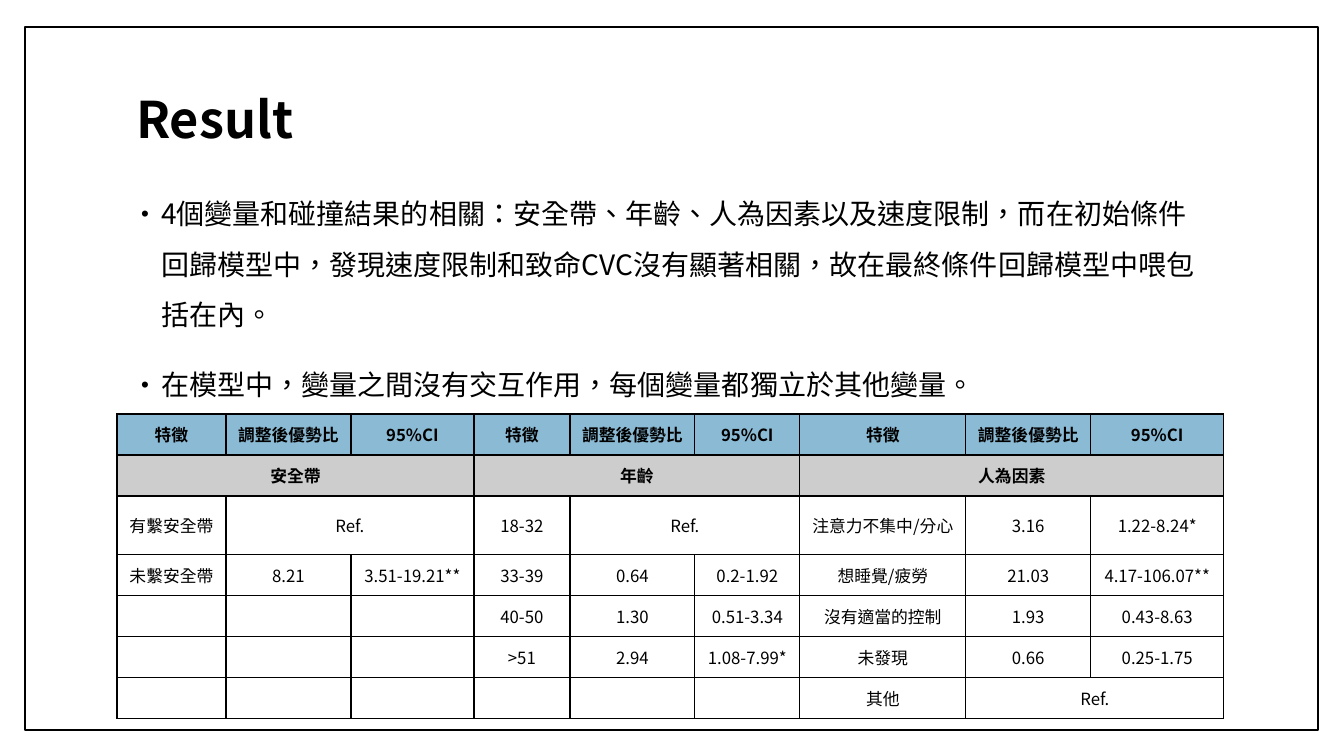
import itertools
from dataclasses import dataclass

import pptx
import pptx.dml.color
import pptx.enum.shapes
import pptx.enum.text
import pptx.oxml
import pptx.oxml.ns
import pptx.util

PX = 914400 / 100.8  # EMU in one px
ALIGN = pptx.enum.text.PP_ALIGN
MIDDLE = pptx.enum.text.MSO_ANCHOR.MIDDLE


@dataclass(frozen=True)
class Theme:
    font: str = "Noto Sans CJK SC"
    ink: str = "000000"
    paper: str = "FFFFFF"
    header: str = "8ABAD4"
    group: str = "CDCDCD"
    title_size: int = 36
    body_size: int = 20
    cell_size: int = 12
    line: int = 1


THEME = Theme()

BULLETS = [
    "4個變量和碰撞結果的相關：安全帶、年齡、人為因素以及速度限制，而在初始條件"
    "回歸模型中，發現速度限制和致命CVC沒有顯著相關，故在最終條件回歸模型中喂包括在內。",
    "在模型中，變量之間沒有交互作用，每個變量都獨立於其他變量。",
]

# None continues the cell on its left
COLUMNS = [109, 125, 123, 96, 125, 105, 166, 125, 133]
ROWS = [
    ["特徵", "調整後優勢比", "95%CI"] * 3,
    ["安全帶", None, None, "年齡", None, None, "人為因素", None, None],
    ["有繫安全帶", "Ref.", None, "18-32", "Ref.", None, "注意力不集中/分心", "3.16", "1.22-8.24*"],
    ["未繫安全帶", "8.21", "3.51-19.21**", "33-39", "0.64", "0.2-1.92",
     "想睡覺/疲勞", "21.03", "4.17-106.07**"],
    ["", "", "", "40-50", "1.30", "0.51-3.34", "沒有適當的控制", "1.93", "0.43-8.63"],
    ["", "", "", ">51", "2.94", "1.08-7.99*", "未發現", "0.66", "0.25-1.75"],
    ["", "", "", "", "", "", "其他", "Ref.", None],
]
ROW_HEIGHT = 41


def px(n):
    return pptx.util.Emu(round(n * PX))


def rgb(value):
    return pptx.dml.color.RGBColor.from_string(value)


def xml(text):
    head, tail = text.split(" ", 1)
    return pptx.oxml.parse_xml(f'{head} {pptx.oxml.ns.nsdecls("a")} {tail}')


def write(p, text, size, bold=False, align=ALIGN.LEFT, spacing=None, before=None):
    """Put one formatted run in a paragraph."""
    p.alignment = align
    if spacing is not None:
        p.line_spacing = spacing
    if before is not None:
        p.space_before = pptx.util.Pt(before)
    r = p.add_run()
    r.text = text
    r.font.size = pptx.util.Pt(size)
    r.font.bold = bold
    r.font.color.rgb = rgb(THEME.ink)
    r.font.name = THEME.font
    rpr = r._r.get_or_add_rPr()
    rpr.set("lang", "zh-TW")
    rpr.find(pptx.oxml.ns.qn("a:latin")).addnext(xml(f'<a:ea typeface="{THEME.font}"/>'))


def place(s, left, top, width, height):
    s.left, s.top, s.width, s.height = map(px, (left, top, width, height))


def add_bullet(p):
    ppr = p._p.get_or_add_pPr()
    ppr.set("marL", str(px(25)))
    ppr.set("indent", str(-px(20)))
    for part in (f'<a:buClr ><a:srgbClr val="{THEME.ink}"/></a:buClr>',
                 '<a:buSzPct val="80000"/>',
                 '<a:buFont typeface="Arial"/>',
                 '<a:buChar char="•"/>'):
        ppr.append(xml(part))


def add_frame(slide, left, top, width, height):
    s = slide.shapes.add_shape(pptx.enum.shapes.MSO_SHAPE.RECTANGLE,
                               *map(px, (left, top, width, height)))
    s.shadow.inherit = False
    s.fill.solid()
    s.fill.fore_color.rgb = rgb(THEME.paper)
    s.line.color.rgb = rgb(THEME.ink)
    s.line.width = pptx.util.Pt(THEME.line)
    # Send it behind the placeholders
    slide.shapes.title.element.addprevious(s.element)


def add_title(slide, text):
    s = slide.shapes.title
    place(s, 126, 68, 1089, 108)
    s.text_frame.vertical_anchor = MIDDLE
    write(s.text_frame.paragraphs[0], text, THEME.title_size, bold=True, spacing=0.9)


def add_list(slide, items):
    s = slide.placeholders[1]
    place(s, 126, 175, 1089, 497)
    tf = s.text_frame
    for i, item in enumerate(items):
        p = tf.add_paragraph() if i else tf.paragraphs[0]
        write(p, item, THEME.body_size, spacing=1.5, before=14)
        add_bullet(p)


def style_cell(cell, fill):
    tcpr = cell._tc.get_or_add_tcPr()
    width = pptx.util.Pt(THEME.line)
    for side in ("lnL", "lnR", "lnT", "lnB"):
        tcpr.append(xml(f'<a:{side} w="{width}"><a:solidFill><a:srgbClr val="{THEME.ink}"/>'
                        f'</a:solidFill></a:{side}>'))
    cell.fill.solid()
    cell.fill.fore_color.rgb = rgb(fill)
    cell.vertical_anchor = MIDDLE


def add_result_table(slide, left, top):
    size = map(px, (left, top, sum(COLUMNS), ROW_HEIGHT * len(ROWS)))
    table = slide.shapes.add_table(len(ROWS), len(COLUMNS), *size).table
    for column, width in zip(table.columns, COLUMNS):
        column.width = px(width)
    for i, row in enumerate(ROWS):
        table.rows[i].height = px(ROW_HEIGHT)
        fill = {0: THEME.header, 1: THEME.group}.get(i, THEME.paper)
        for j, text in enumerate(row):
            cell = table.cell(i, j)
            style_cell(cell, fill)
            if text:
                write(cell.text_frame.paragraphs[0], text, THEME.cell_size,
                      bold=i < 2, align=ALIGN.CENTER)
            if text is not None:
                extra = len(list(itertools.takewhile(lambda t: t is None, row[j + 1:])))
                if extra:
                    cell.merge(table.cell(i, j + extra))


def main():
    prs = pptx.Presentation()
    prs.slide_width, prs.slide_height = px(1344), px(756)
    slide = prs.slides.add_slide(prs.slide_layouts[1])
    add_frame(slide, 25, 27, 1293, 703)
    add_title(slide, "Result")
    add_list(slide, BULLETS)
    add_result_table(slide, 117, 414)
    prs.save("out.pptx")


if __name__ == "__main__":
    main()
